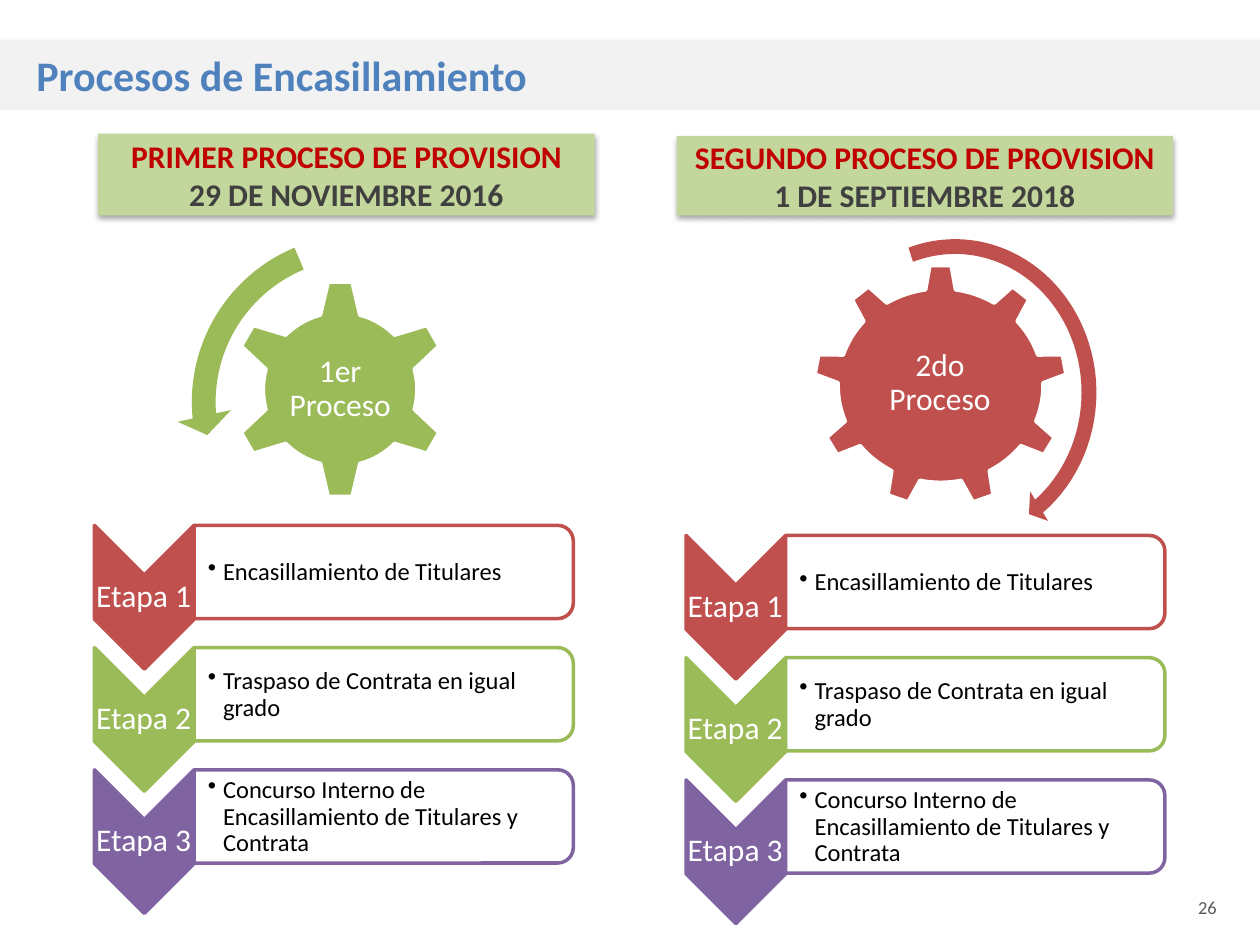
from dataclasses import dataclass

from lxml import etree
from pptx import Presentation
from pptx import util as u
from pptx.dml.color import RGBColor
from pptx.enum import shapes, text
from pptx.oxml.ns import qn

KIND = shapes.MSO_SHAPE
CELL = 0.1  # inches: the slide is a grid of 100 columns by 75 rows
COLS, ROWS = 100, 75


@dataclass(frozen=True)
class Theme:
    font: str = "Calibri"
    blue: str = "4F81BD"
    red: str = "C0504D"
    green: str = "9BBB59"
    violet: str = "8064A2"
    band: str = "F2F2F2"
    pale: str = "C3D69B"
    alert: str = "C00000"
    dark: str = "404040"
    grey: str = "595959"
    black: str = "000000"
    white: str = "FFFFFF"
    title: float = 24
    head: float = 18
    body: float = 14
    small: float = 10.5


T = Theme()
STAGES = [
    ("Etapa 1", "Encasillamiento de Titulares", T.red),
    ("Etapa 2", "Traspaso de Contrata en igual grado", T.green),
    ("Etapa 3", "Concurso Interno de Encasillamiento de Titulares y Contrata", T.violet),
]


def grid(*cells):
    return [u.Inches(c * CELL) for c in cells]


def node(parent, tag, **attrs):
    return etree.SubElement(parent, qn(tag), {k: str(v) for k, v in attrs.items()})


def shape(slide, kind, box, fill, line=None, turn=0, adjust=()):
    item = slide.shapes.add_shape(kind, *grid(*box))
    item.shadow.inherit = False
    item.rotation = turn
    item.fill.solid()
    item.fill.fore_color.rgb = RGBColor.from_string(fill)
    if line:
        item.line.color.rgb = RGBColor.from_string(line)
        item.line.width = u.Pt(2)
    else:
        item.line.fill.background()
    for i, value in enumerate(adjust):
        item.adjustments[i] = value
    return item


def style(para, size, color, bold=False):
    para.font.size = u.Pt(size)
    for run in para.runs:
        font = run.font
        font.name, font.size, font.bold = T.font, u.Pt(size), bold
        font.color.rgb = RGBColor.from_string(color)


def label(slide, box, words, size, color, inset=0.01, bullet=False):
    frame = slide.shapes.add_textbox(*grid(*box)).text_frame
    frame.word_wrap = True
    frame.vertical_anchor = text.MSO_ANCHOR.MIDDLE
    frame.margin_left = u.Inches(0.11 if bullet else inset)
    frame.margin_right = frame.margin_top = frame.margin_bottom = u.Inches(inset)
    frame.text = words
    para = frame.paragraphs[0]
    para.line_spacing = 0.9
    if bullet:
        props = para._p.get_or_add_pPr()
        hang = u.Inches(0.12)
        props.set("marL", str(hang))
        props.set("indent", str(-hang))
        node(props, "a:buChar", char="•")
    else:
        para.alignment = text.PP_ALIGN.CENTER
    style(para, size, color)


def title(slide, words):
    frame = shape(slide, KIND.RECTANGLE, (0, 3.15, COLS, 5.6), T.band).text_frame
    frame.vertical_anchor = text.MSO_ANCHOR.MIDDLE
    frame.text = words
    para = frame.paragraphs[0]
    para.alignment = text.PP_ALIGN.LEFT
    para._p.get_or_add_pPr().set("marL", str(u.Inches(0.19)))
    style(para, T.title, T.blue, True)


def header(slide, box, name, date):
    item = shape(slide, KIND.RECTANGLE, box, T.pale)
    # Soft shadow below the box
    glow = node(item._element.spPr.find(qn("a:effectLst")), "a:outerShdw",
                blurRad=u.Pt(3.1), dist=u.Pt(1.8), dir=90 * 60000, rotWithShape=0)
    node(node(glow, "a:srgbClr", val=T.black), "a:alpha", val=35000)
    frame = item.text_frame
    frame.vertical_anchor = text.MSO_ANCHOR.MIDDLE
    frame.text = f"{name}\n{date}"
    for para, color in zip(frame.paragraphs, (T.alert, T.dark)):
        para.alignment = text.PP_ALIGN.CENTER
        style(para, T.head, color, True)


def gear(slide, kind, box, hub, words, color):
    shape(slide, kind, box, color, T.white)
    label(slide, hub, words, T.head, T.white, inset=0.03)


def stages(slide, left, top):
    step = 9.7
    for i, (name, task, color) in enumerate(STAGES):
        y = top + i * step
        # Both outlines are turned a quarter, so width and height swap
        shape(slide, KIND.CHEVRON, (left, y, 11.4, 7.9), color, color, 90)
        label(slide, (left + 1.7, y + 2.25, 7.9, 3.4), name, T.head, T.white)
        card = shape(slide, KIND.ROUND_2_SAME_RECTANGLE,
                     (left + 21, y - 13.1, 7.4, 30.1), T.white, color, 90)
        tint = card._element.spPr.find(qn("a:solidFill"))[0]
        node(tint, "a:alpha", val=90000)
        label(slide, (left + 9.65, y - 1.35, 29.8, 6.7), task, T.body, T.black, bullet=True)


def number(slide, words):
    frame = slide.shapes.add_textbox(*grid(94.1, 70.6, 4.8, 2.9)).text_frame
    frame.word_wrap = False
    frame.text = words
    style(frame.paragraphs[0], T.small, T.grey)


def main():
    deck = Presentation()
    deck.slide_width, deck.slide_height = grid(COLS, ROWS)
    slide = deck.slides.add_slide(deck.slide_layouts[6])

    # Title band and page number
    number(slide, "26")
    title(slide, "Procesos de Encasillamiento")

    # Gears with their turning arrows
    gear(slide, KIND.GEAR_9, (64.6, 21, 20.1, 19.2), (68.5, 25.5, 12.2, 9.9),
         "2do Proceso", T.red)
    gear(slide, KIND.GEAR_6, (18.3, 22.2, 17.4, 17.4), (22, 26.6, 10, 8.6),
         "1er Proceso", T.green)
    shape(slide, KIND.CIRCULAR_ARROW, (63.8, 18.2, 24, 25.9), T.red,
          adjust=(0.049, 3.126, 32.104, 151.316, 0.057))
    shape(slide, KIND.LEFT_CIRCULAR_ARROW, (14, 17.4, 29, 29), T.green,
          adjust=(0.065, 4.3, 104.891, 148.378, 0.075))

    # One column of stages under each heading
    stages(slide, 5.75, 43.45)
    header(slide, (7.8, 10.6, 39.4, 6.5), "PRIMER PROCESO DE PROVISION", "29 DE NOVIEMBRE 2016")
    stages(slide, 52.7, 44.25)
    header(slide, (53.7, 10.8, 39.4, 6.3), "SEGUNDO PROCESO DE PROVISION", "1 DE SEPTIEMBRE 2018")

    deck.save("out.pptx")


if __name__ == "__main__":
    main()
